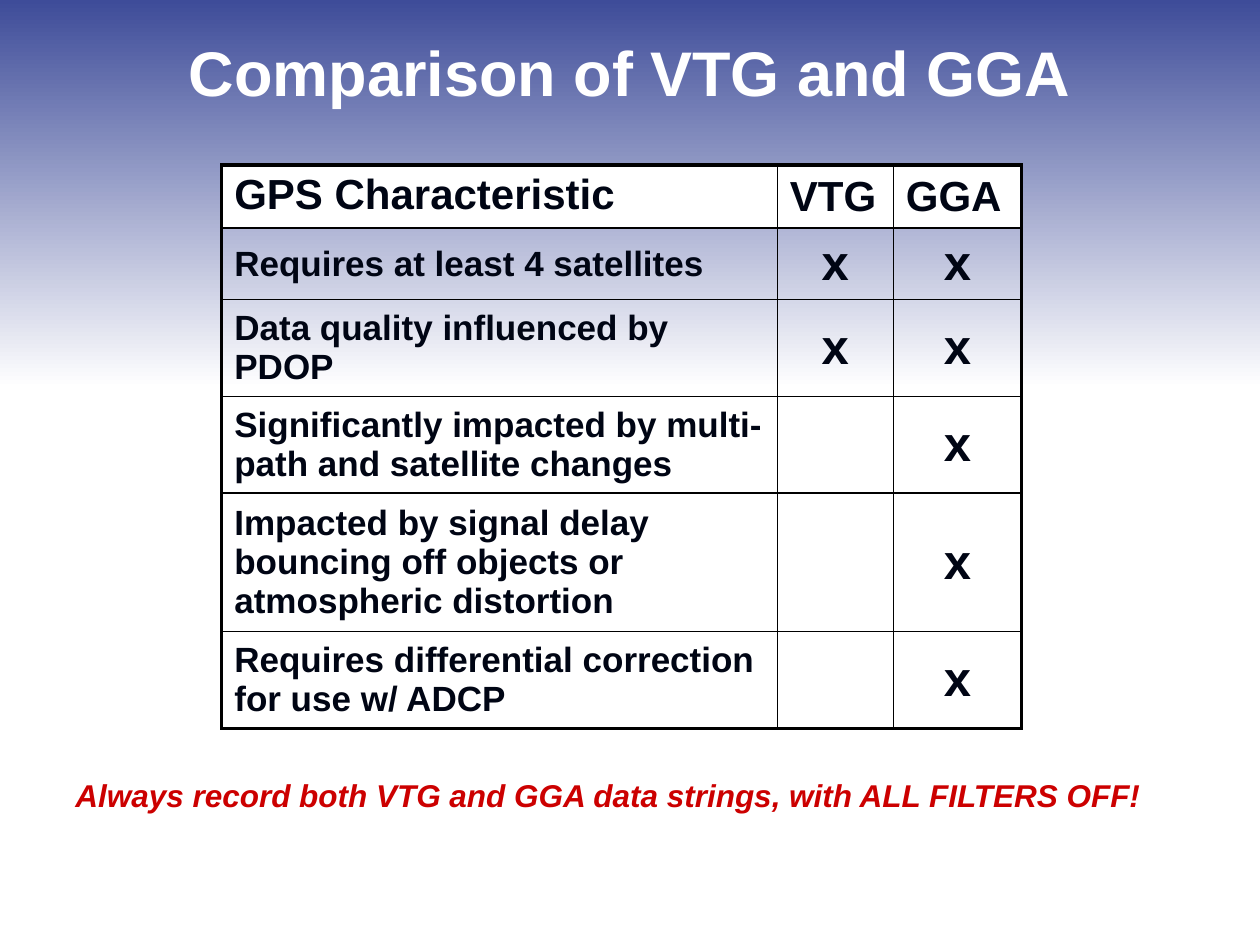
import pptx
import pptx.dml.color
import pptx.enum.shapes
import pptx.enum.text
import pptx.oxml
import pptx.oxml.ns
import pptx.util
from pptx.util import Inches

ALIGN = pptx.enum.text.PP_ALIGN
ANCHOR = pptx.enum.text.MSO_ANCHOR
NAMESPACE = pptx.oxml.ns.nsdecls("a")

HEADINGS = ["GPS Characteristic", "VTG", "GGA"]
ROWS = [
    ["Requires at least 4 satellites", "x", "x"],
    ["Data quality influenced by PDOP", "x", "x"],
    ["Significantly impacted by multi-path and satellite changes", "", "x"],
    ["Impacted by signal delay bouncing off objects or atmospheric distortion", "", "x"],
    ["Requires differential correction for use w/ ADCP", "", "x"],
]
COLUMN_WIDTHS = [4.41, 0.92, 1.02]
ROW_HEIGHTS = [0.5, 0.5, 0.74, 0.74, 0.8, 0.74]


def color(value):
    return pptx.dml.color.RGBColor.from_string(value)


def style_font(font, size, value, italic=False):
    font.name = "Arial"
    font.size = pptx.util.Pt(size)
    font.bold = True
    font.italic = italic
    font.color.rgb = color(value)


def add_text_box(slide, left, top, width, height, text):
    frame = slide.shapes.add_textbox(left, top, width, height).text_frame
    frame.word_wrap = True
    paragraph = frame.paragraphs[0]
    paragraph.text = text
    return frame, paragraph


def add_background(slide, left, top, width, height):
    band = slide.shapes.add_shape(
        pptx.enum.shapes.MSO_SHAPE.RECTANGLE, left, top, width, height)
    band.shadow.inherit = False
    band.line.fill.background()
    band.fill.gradient()
    band.fill.gradient_angle = 270  # top to bottom
    for stop, position, value in zip(band.fill.gradient_stops, (0, 1), ("3E4C99", "FFFFFF")):
        stop.position = position
        stop.color.rgb = color(value)


def add_title(slide, left, top, width, height):
    frame, paragraph = add_text_box(
        slide, left, top, width, height, "Comparison of VTG and GGA")
    frame.vertical_anchor = ANCHOR.MIDDLE
    paragraph.alignment = ALIGN.CENTER
    run = paragraph.runs[0]
    style_font(run.font, 36, "FFFFFF")
    # Text shadow, which follows the fill in the run properties
    shadow = pptx.oxml.parse_xml(
        f'<a:effectLst {NAMESPACE}><a:outerShdw dist="35921" dir="2700000">'
        '<a:srgbClr val="000000"/></a:outerShdw></a:effectLst>')
    run.font._element.find(pptx.oxml.ns.qn("a:solidFill")).addnext(shadow)


def set_borders(cell, widths):
    properties = cell._tc.get_or_add_tcPr()
    for index, (side, width) in enumerate(zip("LRTB", widths)):
        properties.insert(index, pptx.oxml.parse_xml(
            f'<a:ln{side} {NAMESPACE} w="{pptx.util.Pt(width)}"><a:solidFill>'
            f'<a:srgbClr val="000000"/></a:solidFill></a:ln{side}>'))


def add_comparison_table(slide, left, top, width, height):
    rows = [HEADINGS] + ROWS
    last_row, last_column = len(rows) - 1, len(HEADINGS) - 1
    table = slide.shapes.add_table(
        len(rows), len(HEADINGS), left, top, width, height).table
    table.first_row = table.horz_banding = False
    for column, column_width in zip(table.columns, COLUMN_WIDTHS):
        column.width = Inches(column_width)
    for row, row_height in zip(table.rows, ROW_HEIGHTS):
        row.height = Inches(row_height)

    for r, texts in enumerate(rows):
        for c, text in enumerate(texts):
            cell = table.cell(r, c)
            is_corner = r == 0 and c == 0
            cell.vertical_anchor = ANCHOR.TOP if is_corner else ANCHOR.MIDDLE
            if r == 0:
                cell.fill.solid()
                cell.fill.fore_color.rgb = color("FFFFFF")
            else:
                cell.fill.background()
            # Heavy frame, medium rule under the headings, thin inner lines
            set_borders(cell, [
                2.25 if c == 0 else 1,
                2.25 if c == last_column else 1,
                {0: 2.25, 1: 1.5}.get(r, 1),
                {0: 1.5, last_row: 2.25}.get(r, 1),
            ])
            paragraph = cell.text_frame.paragraphs[0]
            paragraph.text = text
            is_mark = r > 0 and c > 0
            paragraph.alignment = ALIGN.CENTER if is_mark else ALIGN.LEFT
            size = 24 if r == 0 else 28 if is_mark else 20
            style_font(paragraph.font, size, "000514")


def add_advice(slide, left, top, width, height):
    _, paragraph = add_text_box(
        slide, left, top, width, height,
        "Always record both VTG and GGA data strings, with ALL FILTERS OFF!")
    style_font(paragraph.font, 18, "CC0000", italic=True)


def main():
    presentation = pptx.Presentation()
    presentation.slide_width = Inches(10)
    presentation.slide_height = Inches(7.5)
    slide = presentation.slides.add_slide(presentation.slide_layouts[6])
    add_background(slide, 0, 0, Inches(10), Inches(3.08))
    add_title(slide, Inches(0.5), Inches(0.23), Inches(9), Inches(0.67))
    add_advice(slide, Inches(0.5), Inches(6.11), Inches(9.5), Inches(0.52))
    add_comparison_table(slide, Inches(1.76), Inches(1.31), Inches(6.35), Inches(4.02))
    presentation.save("out.pptx")


if __name__ == "__main__":
    main()
